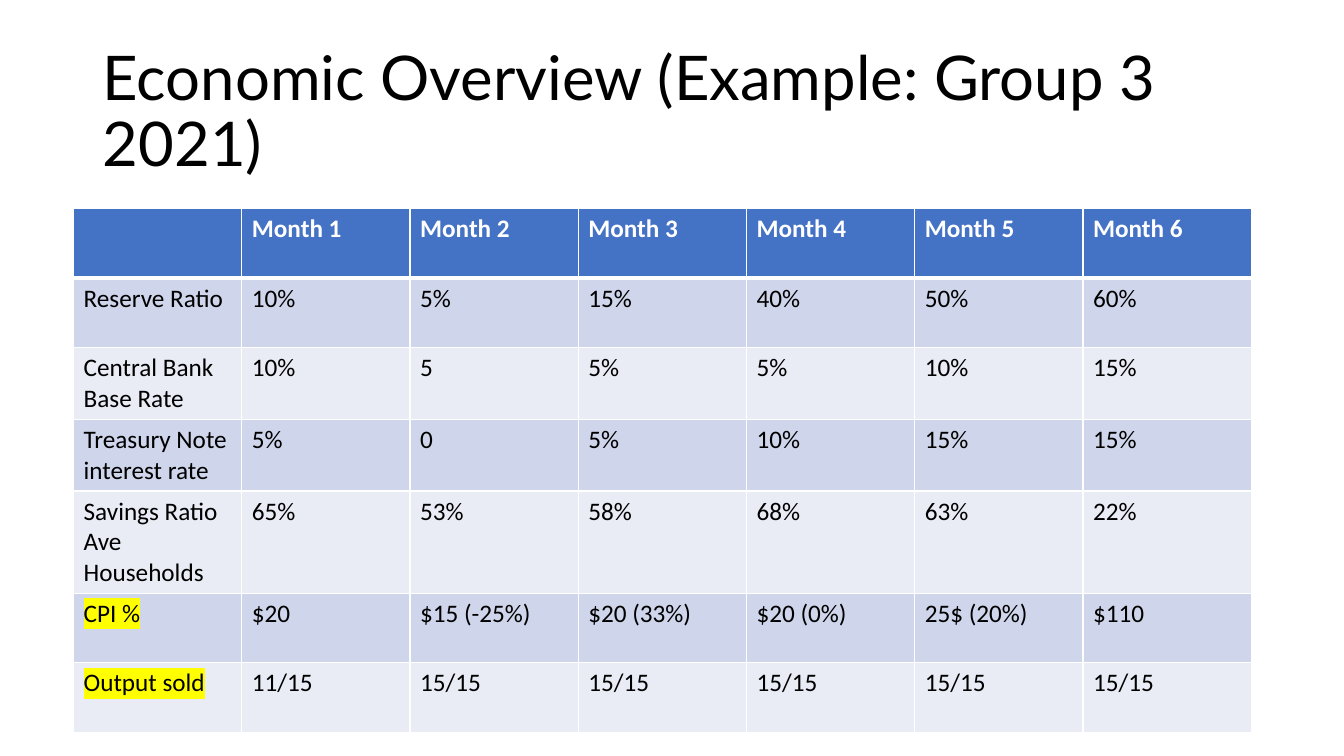
from lxml import etree
from pptx import Presentation
from pptx.dml.color import RGBColor
from pptx.enum.text import MSO_ANCHOR, MSO_AUTO_SIZE, PP_ALIGN
from pptx.oxml.ns import qn
from pptx.util import Inches, Pt

LEFT = PP_ALIGN.LEFT
MIDDLE = MSO_ANCHOR.MIDDLE
NO_AUTOFIT = MSO_AUTO_SIZE.NONE
TITLE_ONLY = 5

COLORS = {
    "text": "000000",
    "header_text": "FFFFFF",
    "header": "4472C4",
    "odd_row": "CFD5EA",
    "even_row": "E9EBF5",
    "border": "FFFFFF",
    "highlight": "FFFF00",
}
HEADER = [""] + [f"Month {month}" for month in range(1, 7)]
INDICATORS = [
    ["Reserve Ratio", "10%", "5%", "15%", "40%", "50%", "60%"],
    ["Central Bank Base Rate", "10%", "5", "5%", "5%", "10%", "15%"],
    ["Treasury Note interest rate", "5%", "0", "5%", "10%", "15%", "15%"],
    ["Savings Ratio\nAve Households", "65%", "53%", "58%", "68%", "63%", "22%"],
    ["CPI %", "$20", "$15 (-25%)", "$20 (33%)", "$20 (0%)", "25$ (20%)", "$110"],
    ["Output sold", "11/15"] + ["15/15"] * 5,
]
HIGHLIGHTED = {"CPI %", "Output sold"}


def write_text(frame, text, size=18, font="Calibri", color="text", bold=False,
               highlight=None, line_spacing=None):
    """Fill a text frame, one paragraph per line of text."""
    for index, line in enumerate(text.split("\n")):
        paragraph = frame.add_paragraph() if index else frame.paragraphs[0]
        paragraph.alignment = LEFT
        paragraph.line_spacing = line_spacing
        run = paragraph.add_run()
        run.text = line
        run.font.size = Pt(size)
        run.font.name = font
        run.font.bold = bold
        run.font.color.rgb = RGBColor.from_string(COLORS[color])
        if highlight:
            mark = etree.Element(qn("a:highlight"))
            etree.SubElement(mark, qn("a:srgbClr"), val=COLORS[highlight])
            run.font.fill  # the highlight must follow the text fill
            run._r.rPr.find(qn("a:solidFill")).addnext(mark)


def set_borders(cell, top=1, bottom=1):
    """Draw all four borders; widths are in points."""
    properties = cell._tc.get_or_add_tcPr()
    for side, width in (("L", 1), ("R", 1), ("T", top), ("B", bottom)):
        line = etree.SubElement(properties, qn(f"a:ln{side}"), w=str(Pt(width)))
        fill = etree.SubElement(line, qn("a:solidFill"))
        etree.SubElement(fill, qn("a:srgbClr"), val=COLORS["border"])


def add_title(slide, left, top, width, height):
    title = slide.shapes.title
    title.left, title.top = Inches(left), Inches(top)
    title.width, title.height = Inches(width), Inches(height)
    frame = title.text_frame
    frame.word_wrap = True
    frame.auto_size = NO_AUTOFIT
    frame.vertical_anchor = MIDDLE
    write_text(frame, "Economic Overview (Example: Group 3 2021)",
               size=44, font="Lato", line_spacing=0.9)


def add_indicator_table(slide, left, top, width, height):
    rows = [HEADER] + INDICATORS
    table = slide.shapes.add_table(
        len(rows), len(HEADER), Inches(left), Inches(top), Inches(width), Inches(height)
    ).table
    for row_index, row in enumerate(rows):
        is_header = row_index == 0
        fill = "header" if is_header else "odd_row" if row_index % 2 else "even_row"
        for column_index, text in enumerate(row):
            cell = table.cell(row_index, column_index)
            set_borders(cell, top=3 if row_index == 1 else 1, bottom=3 if is_header else 1)
            cell.fill.solid()
            cell.fill.fore_color.rgb = RGBColor.from_string(COLORS[fill])
            write_text(cell.text_frame, text, bold=is_header,
                       color="header_text" if is_header else "text",
                       highlight="highlight" if text in HIGHLIGHTED else None)


def main():
    presentation = Presentation()
    presentation.slide_width = Inches(13.33)
    presentation.slide_height = Inches(7.5)
    slide = presentation.slides.add_slide(presentation.slide_layouts[TITLE_ONLY])
    add_title(slide, 0.92, 0.4, 11.5, 1.45)
    add_indicator_table(slide, 0.73, 2.07, 11.68, 7 * 0.69)
    presentation.save("out.pptx")


if __name__ == "__main__":
    main()
